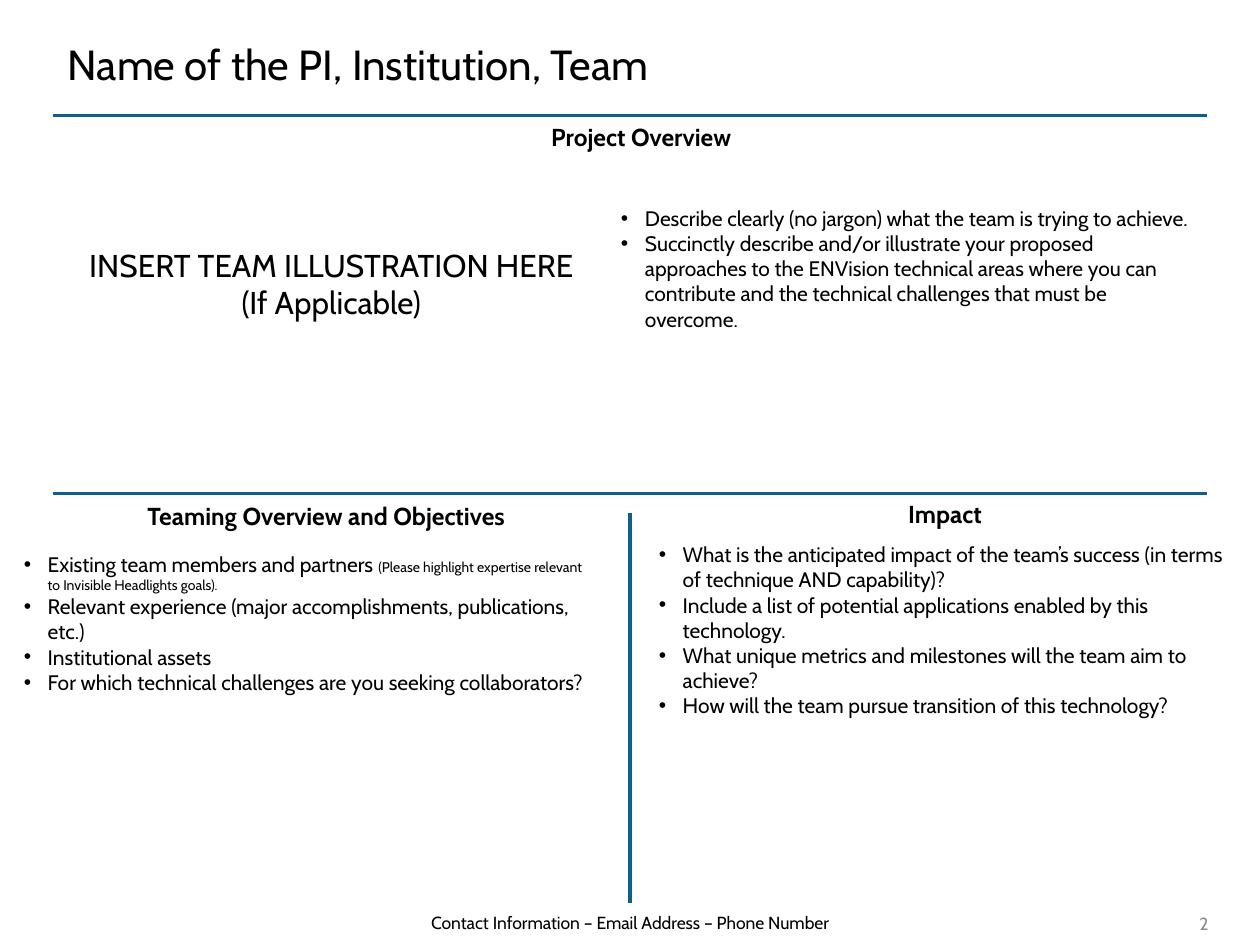
"""Build a one-page team profile slide with overview, teaming and impact sections."""
from lxml import etree
from pptx import Presentation
from pptx.dml.color import RGBColor
from pptx.enum.shapes import MSO_CONNECTOR
from pptx.enum.text import MSO_ANCHOR, PP_ALIGN
from pptx.oxml.ns import qn
from pptx.util import Inches, Pt

STRAIGHT = MSO_CONNECTOR.STRAIGHT
TOP, MIDDLE = MSO_ANCHOR.TOP, MSO_ANCHOR.MIDDLE
LEFT, CENTER, RIGHT = PP_ALIGN.LEFT, PP_ALIGN.CENTER, PP_ALIGN.RIGHT
BLACK = RGBColor(0x00, 0x00, 0x00)
GRAY = RGBColor(0x89, 0x89, 0x89)
BLUE = RGBColor(0x0F, 0x5E, 0x90)
FONT = "Cabin"
INDENT = Inches(0.19)

prs = Presentation()
prs.slide_width, prs.slide_height = Inches(10), Inches(7.5)
slide = prs.slides.add_slide(prs.slide_layouts[6])


def add_text(box, lines, size, align=LEFT, anchor=TOP, color=BLACK, bold=False):
    frame = slide.shapes.add_textbox(*map(Inches, box)).text_frame
    frame.word_wrap = True
    frame.vertical_anchor = anchor
    frame.text = "\n".join(lines)
    for paragraph in frame.paragraphs:
        paragraph.alignment = align
        for run in paragraph.runs:
            run.font.name = FONT
            run.font.size = Pt(size)
            run.font.bold = bold
            run.font.color.rgb = color
    return frame


def add_bullets(box, lines):
    frame = add_text(box, lines, 12)
    for paragraph in frame.paragraphs:
        properties = paragraph._p.get_or_add_pPr()
        properties.set("marL", str(INDENT))
        properties.set("indent", str(-INDENT))
        etree.SubElement(properties, qn("a:buFont"), typeface="Arial")
        etree.SubElement(properties, qn("a:buChar"), char="•")
    return frame


dividers = [
    (0.42, 0.92, 9.58, 0.92),
    (0.42, 3.92, 9.58, 3.92),
    (5, 4.07, 5, 7.17),
]
for ends in dividers:
    divider = slide.shapes.add_connector(STRAIGHT, *map(Inches, ends))
    divider.line.color.rgb = BLUE
    divider.line.width = Pt(1.75)
    etree.SubElement(divider._element.spPr, qn("a:effectLst"))

add_text((0.44, 0.17, 7.81, 0.67), ["Name of the PI, Institution, Team"], 24, anchor=MIDDLE)

headings = [
    ("Project Overview", (2.59, 0.92, 5, 0.34)),
    ("Teaming Overview and Objectives", (0.57, 3.93, 4.04, 0.34)),
    ("Impact", (5, 3.91, 5, 0.34)),
]
for heading, box in headings:
    add_text(box, [heading], 14, CENTER, bold=True)

add_text(
    (0.13, 1.9, 5, 0.71),
    ["INSERT TEAM ILLUSTRATION HERE", "(If Applicable)"],
    18,
    CENTER,
)

add_bullets((4.83, 1.58, 4.75, 1.31), [
    "Describe clearly (no jargon) what the team is trying to achieve.",
    "Succinctly describe and/or illustrate your proposed approaches to the ENVision "
    "technical areas where you can contribute and the technical challenges that must "
    "be overcome.",
])

teaming = add_bullets((0.09, 4.33, 4.75, 1.45), [
    "Existing team members and partners ",
    "Relevant experience (major accomplishments, publications, etc.)",
    "Institutional assets",
    "For which technical challenges are you seeking collaborators?",
])
expertise_hint = teaming.paragraphs[0].add_run()
expertise_hint.text = "(Please highlight expertise relevant to Invisible Headlights goals)."
expertise_hint.font.name = FONT
expertise_hint.font.size = Pt(8)
expertise_hint.font.color.rgb = BLACK

add_bullets((5.13, 4.25, 4.75, 1.51), [
    "What is the anticipated impact of the team’s success (in terms of technique AND "
    "capability)?",
    "Include a list of potential applications enabled by this technology.",
    "What unique metrics and milestones will the team aim to achieve?",
    "How will the team pursue transition of this technology?",
])

add_text(
    (1.46, 7.16, 7.08, 0.33),
    ["Contact Information – Email Address – Phone Number"],
    10,
    CENTER,
    MIDDLE,
)
add_text((8.86, 7.17, 0.83, 0.32), ["2"], 10, RIGHT, MIDDLE, GRAY)

prs.save("out.pptx")
